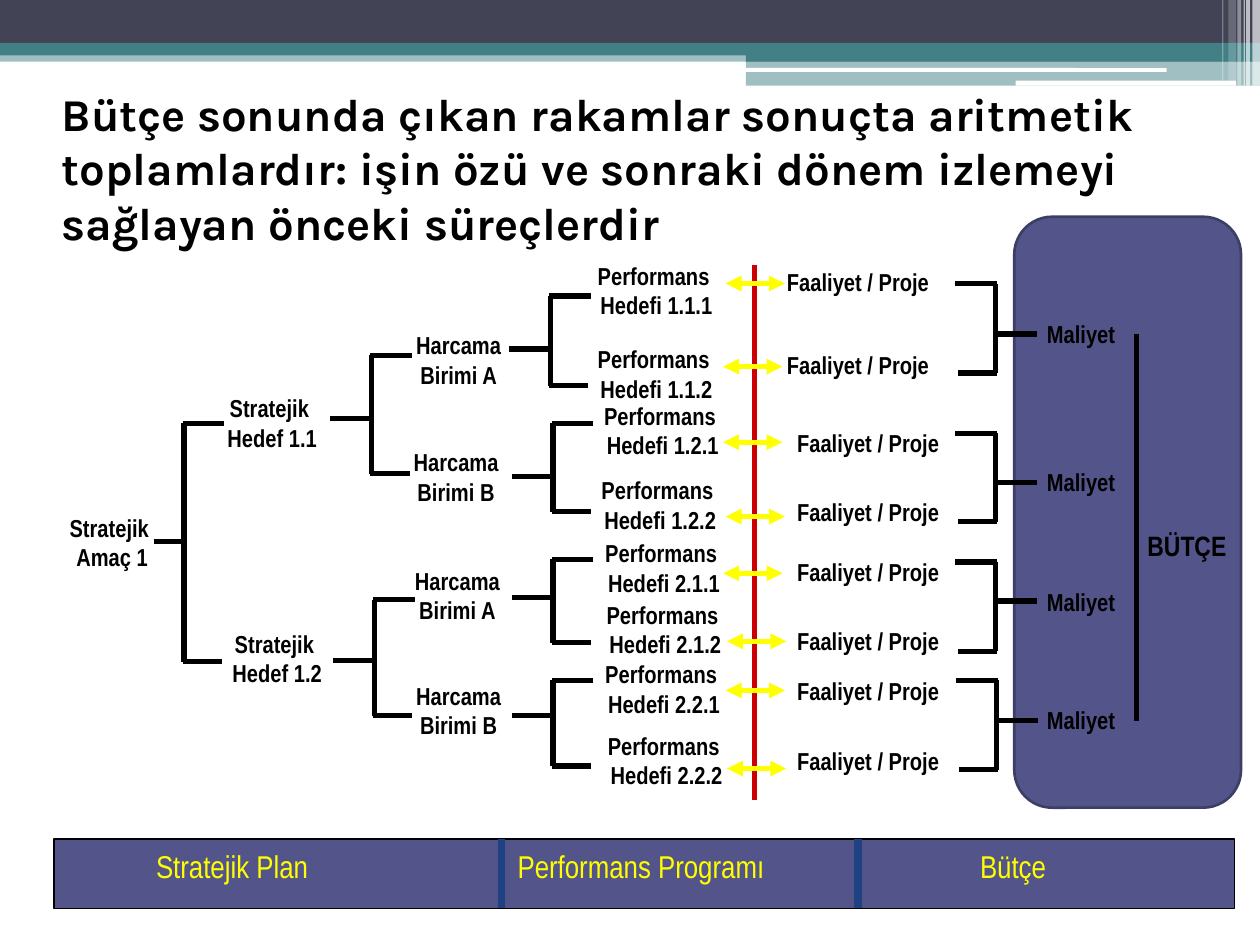
import dataclasses
import itertools

import pptx
import pptx.dml.color
import pptx.enum.shapes
import pptx.enum.text
import pptx.oxml
import pptx.oxml.ns
import pptx.util

RGB = pptx.dml.color.RGBColor
SHAPE = pptx.enum.shapes.MSO_SHAPE
ALIGN = pptx.enum.text.PP_ALIGN
ANCHOR = pptx.enum.text.MSO_ANCHOR

BLACK = RGB(0x00, 0x00, 0x00)
WHITE = RGB(0xFF, 0xFF, 0xFF)
TEAL = RGB(0x43, 0x80, 0x86)
SLATE = RGB(0x42, 0x44, 0x56)
VIOLET = RGB(0x53, 0x54, 0x8A)
EDGE = RGB(0x3D, 0x3E, 0x66)
RED = RGB(0xCC, 0x00, 0x00)
YELLOW = RGB(0xFF, 0xFF, 0x00)
NAVY = RGB(0x1F, 0x40, 0x81)

deck = pptx.Presentation()
deck.slide_width = pptx.util.Inches(10)
deck.slide_height = pptx.util.Inches(7.5)
slide = deck.slides.add_slide(deck.slide_layouts[6])

# Grid of 100 columns by 75 rows
COL = deck.slide_width / 100
ROW = deck.slide_height / 75

BOLD = {"name": "Arial Narrow", "size": pptx.util.Pt(14), "bold": True}
LARGE = BOLD | {"size": pptx.util.Pt(16)}
BAND = {"name": "Arial Narrow", "size": pptx.util.Pt(18), "bold": False}
TITLE = {"name": "Karla", "size": pptx.util.Pt(26), "bold": True}


@dataclasses.dataclass(frozen=True)
class Box:
    """A place on the grid, in columns and rows."""
    x: float
    y: float
    w: float = 10.2
    h: float = 6.3

    def lengths(self) -> list[int]:
        return [round(self.x * COL), round(self.y * ROW),
                round(self.w * COL), round(self.h * ROW)]


@dataclasses.dataclass(frozen=True)
class Fork:
    """A stem that splits in two; side is 1 to open right, -1 left."""
    x: float
    mid: float
    top: float
    low: float
    side: int = 1
    stem: float = 3.3


def panel(box: Box, fill: RGB, kind=SHAPE.RECTANGLE, alpha: int = 100,
          edge: RGB | None = None, width: float = 0) -> None:
    shape = slide.shapes.add_shape(kind, *box.lengths())
    shape.shadow.inherit = False
    shape.fill.solid()
    shape.fill.fore_color.rgb = fill
    if alpha < 100:
        tone = shape.fill._xPr.find(".//" + pptx.oxml.ns.qn("a:srgbClr"))
        tone.append(pptx.oxml.parse_xml(
            f'<a:alpha {pptx.oxml.ns.nsdecls("a")} val="{alpha * 1000}"/>'))
    if edge is None:
        shape.line.fill.background()
    else:
        shape.line.color.rgb = edge
        shape.line.width = pptx.util.Pt(width)


def stroke(x1: float, y1: float, x2: float, y2: float, tone: RGB = BLACK,
           width: float = 3, heads: bool = False) -> None:
    line = slide.shapes.add_connector(
        pptx.enum.shapes.MSO_CONNECTOR.STRAIGHT,
        round(x1 * COL), round(y1 * ROW), round(x2 * COL), round(y2 * ROW))
    line.line.color.rgb = tone
    line.line.width = pptx.util.Pt(width)
    space = pptx.oxml.ns.nsdecls("a")
    if heads:
        for end in ("headEnd", "tailEnd"):
            line.line._get_or_add_ln().append(
                pptx.oxml.parse_xml(f'<a:{end} {space} type="triangle"/>'))
    line._element.spPr.append(pptx.oxml.parse_xml(f"<a:effectLst {space}/>"))


def label(box: Box, text: str, style: dict = BOLD, tone: RGB = BLACK,
          wrap: bool = False, align=ALIGN.CENTER, anchor=ANCHOR.MIDDLE) -> None:
    frame = slide.shapes.add_textbox(*box.lengths()).text_frame
    frame.word_wrap = wrap
    frame.vertical_anchor = anchor
    if not wrap:
        frame.margin_left = frame.margin_right = 0
    frame.text = text
    for para in frame.paragraphs:
        para.alignment = align
        for run in para.runs:
            for key, value in style.items():
                setattr(run.font, key, value)
            run.font.color.rgb = tone


def draw(fork: Fork) -> None:
    x, side = fork.x, fork.side
    stroke(x - side * fork.stem, fork.mid, x, fork.mid)
    stroke(x, fork.low, x, fork.top)
    stroke(x - side * 0.1, fork.top, x + side * 3.2, fork.top)
    stroke(x - side * 0.1, fork.low, x + side * 3, fork.low)


# Header bands
for box, fill, alpha in (
    (Box(0, 4, 100, 0.9), TEAL, 50),
    (Box(0, 0, 100, 3.4), SLATE, 100),
    (Box(0, 3.4, 100, 1), TEAL, 100),
    (Box(59.2, 3.9, 40.8, 1), TEAL, 100),
    (Box(59.2, 4.8, 40.8, 2), TEAL, 50),
):
    panel(box, fill, alpha=alpha)
for box in (Box(59.1, 5.4, 33.5, 0.3), Box(80.6, 6.4, 17.5, 0.4)):
    panel(box, WHITE, SHAPE.ROUNDED_RECTANGLE)
for x, w, h, alpha in ((99.4, 0.6, 6.8, 65), (98.9, 0.3, 6.8, 65),
                       (98.7, 0.1, 6.8, 60), (98.2, 0.3, 6.8, 40),
                       (97.5, 0.6, 6.4, 20), (97, 0.1, 6.4, 30)):
    panel(Box(x, 0, w, h), WHITE, alpha=alpha)

# Budget panel and title
panel(Box(80.5, 17.2, 18, 46.9), VIOLET, SHAPE.ROUNDED_RECTANGLE,
      edge=EDGE, width=1.5)
label(Box(3.9, 7, 93.1, 12.6),
      "Bütçe sonunda çıkan rakamlar sonuçta aritmetik toplamlardır: işin özü "
      "ve sonraki dönem izlemeyi sağlayan önceki süreçlerdir",
      TITLE, wrap=True, align=ALIGN.LEFT)

# Forks of the tree, then those that gather the costs
for fork in (
    Fork(14.6, 43, 33.6, 52.5, stem=2.4),
    Fork(29.5, 33.2, 28.2, 37.6),
    Fork(29.7, 52.4, 47.6, 56.8),
    Fork(43.7, 27.7, 23.5, 30.6),
    Fork(43.9, 37.8, 33.6, 40.6),
    Fork(43.9, 47.4, 44.4, 51),
    Fork(43.9, 56.8, 54, 60.8),
    Fork(79, 26.5, 22.5, 29.6, -1),
    Fork(79, 38.3, 34.4, 41.4, -1),
    Fork(79, 47.7, 44.6, 51.7, -1),
    Fork(79.1, 57.2, 54, 61.1, -1),
):
    draw(fork)

# Aims and units
label(Box(3.8, 39.9), "Stratejik \nAmaç 1")
label(Box(16.5, 30.4), "Stratejik \nHedef 1.1")
label(Box(16.9, 49.1), "Stratejik \nHedef 1.2")
for x, y, unit in ((31.3, 25.4, "A"), (31.1, 34.7, "B"),
                   (31.2, 44.1, "A"), (31.3, 53.2, "B")):
    label(Box(x, y), f"Harcama\nBirimi {unit}")

# Goals, each tied by an arrow to its task
stroke(59.9, 21, 59.9, 63.5, RED)
GOALS = (
    # goal x, goal y, arrow x, arrow y, task x, task y
    (47, 19.9, 57.6, 22.5, 60.2, 19.2),
    (47, 26.5, 57.4, 29.1, 60.2, 25.8),
    (47.5, 31, 57.4, 35.1, 61, 32),
    (47.3, 36.9, 57.6, 41, 61, 37.5),
    (47.6, 41.9, 57.4, 45.5, 61, 42.2),
    (47.7, 46.8, 57.7, 50.9, 61, 47.7),
    (47.6, 51.5, 57.6, 54.8, 61, 51.7),
    (47.8, 57.2, 57.7, 61, 61, 57.2),
)
for code, place in zip(itertools.product("12", repeat=3), GOALS):
    gx, gy, ax, ay, tx, ty = place
    label(Box(gx, gy), f"Performans \nHedefi {'.'.join(code)}")
    label(Box(tx, ty, 15.8), "Faaliyet / Proje")
    stroke(ax, ay, ax + 4.7, ay, YELLOW, heads=True)

# Costs and their sum
for y in (23.3, 35.1, 44.6, 54):
    label(Box(80.7, y), "Maliyet")
stroke(90.2, 57.2, 90.2, 26.5)
label(Box(89.1, 40.1), "BÜTÇE", LARGE)

# Bottom band of stages
panel(Box(4.3, 66.6, 93.7, 5.5), VIOLET, edge=BLACK, width=0.75)
for x in (39.8, 68.1):
    stroke(x, 66.6, x, 72.1, NAVY, 4.5)
for x, w, text in ((11.4, 19.7, "Stratejik Plan"),
                   (40.1, 34.7, "Performans Programı"),
                   (76.8, 19.7, "Bütçe")):
    label(Box(x, 66.7, w, 4), text, BAND, YELLOW, True, ALIGN.LEFT, ANCHOR.TOP)

deck.save("out.pptx")
